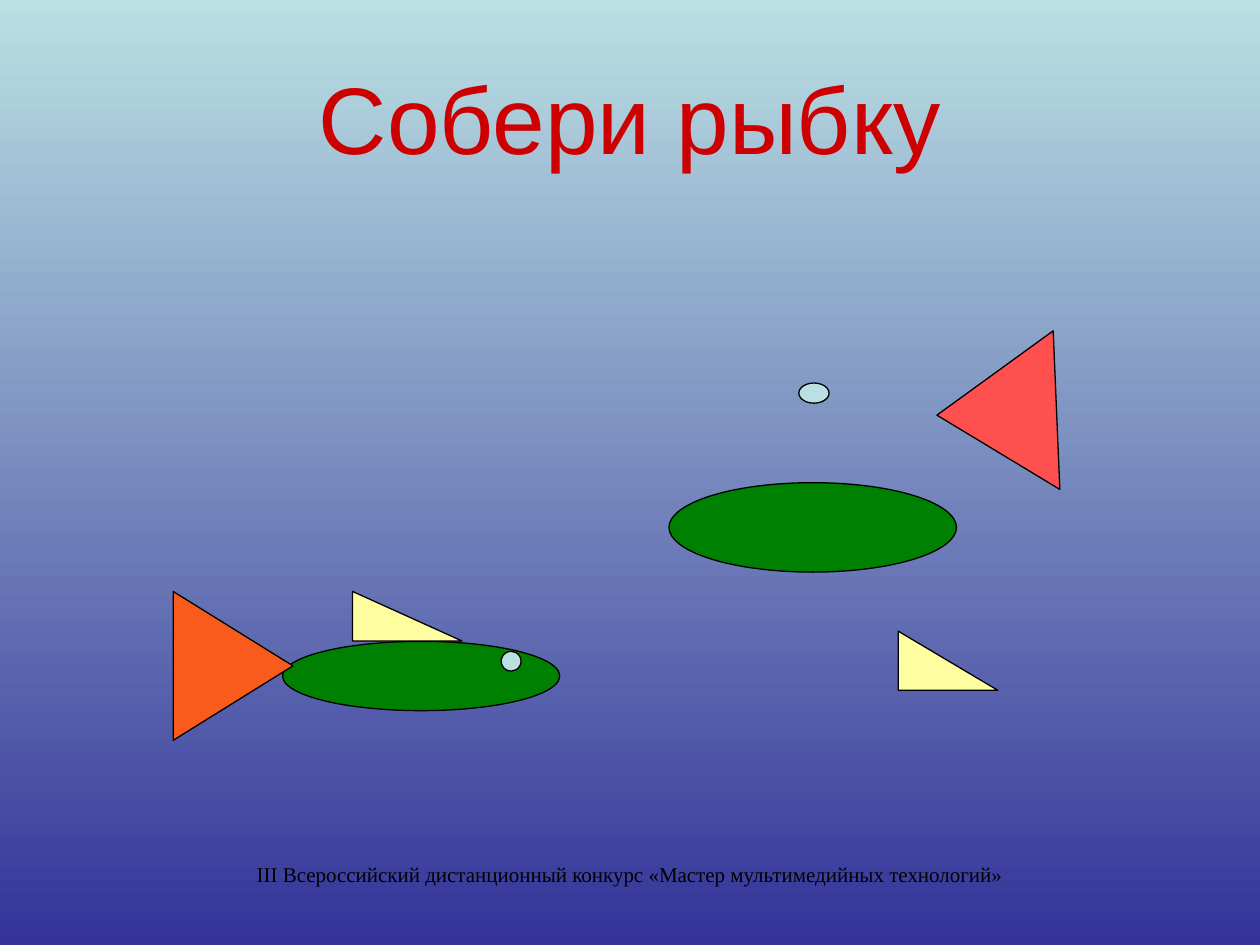
from pptx import Presentation
from pptx.dml.color import RGBColor
from pptx.enum.shapes import MSO_SHAPE
from pptx.enum.text import MSO_ANCHOR, PP_ALIGN
from pptx.util import Pt

BLACK = RGBColor(0x00, 0x00, 0x00)
RED = RGBColor(0xCC, 0x00, 0x00)
GREEN = RGBColor(0x00, 0x80, 0x00)
CORAL = RGBColor(0xFF, 0x50, 0x50)
ORANGE = RGBColor(0xF8, 0x5B, 0x1C)
YELLOW = RGBColor(0xFF, 0xFE, 0xA0)
PALE_YELLOW = RGBColor(0xFE, 0xFE, 0xA0)
PALE_BLUE = RGBColor(0xBB, 0xE0, 0xE3)
DEEP_BLUE = RGBColor(0x33, 0x33, 0x99)


def paint_background(slide):
    fill = slide.background.fill
    fill.gradient()
    fill.gradient_angle = 270
    for stop, color in zip(fill.gradient_stops, (PALE_BLUE, DEEP_BLUE)):
        stop.color.rgb = color


def add_text(slide, box, text, font_name, size, color):
    shape = slide.shapes.add_textbox(*map(Pt, box))
    frame = shape.text_frame
    frame.word_wrap = True
    frame.vertical_anchor = MSO_ANCHOR.MIDDLE
    paragraph = frame.paragraphs[0]
    paragraph.alignment = PP_ALIGN.CENTER
    run = paragraph.add_run()
    run.text = text
    run.font.name = font_name
    run.font.size = Pt(size)
    run.font.color.rgb = color


def add_fish_parts(slide, left, top, parts):
    """Draw parts, each (preset, x, y, width, height, color, rotation), from a corner."""
    for preset, x, y, width, height, color, rotation in parts:
        shape = slide.shapes.add_shape(
            preset, Pt(left + x), Pt(top + y), Pt(width), Pt(height))
        shape.shadow.inherit = False
        shape.rotation = rotation
        shape.fill.solid()
        shape.fill.fore_color.rgb = color
        shape.line.color.rgb = BLACK
        shape.line.width = Pt(0.75)


def add_loose_parts(slide, left, top):
    add_fish_parts(slide, left, top, [
        (MSO_SHAPE.OVAL, 0.3, 86.8, 164.2, 51.1, GREEN, 0),
        (MSO_SHAPE.ISOSCELES_TRIANGLE, 142.2, 12.6, 90.7, 68.4, CORAL, 267.6),
        (MSO_SHAPE.RIGHT_TRIANGLE, 131.3, 171.7, 56.9, 33.8, YELLOW, 0),
        (MSO_SHAPE.OVAL, 74.5, 29.9, 17.3, 11.5, PALE_BLUE, 0),
    ])


def add_assembled_fish(slide, left, top):
    add_fish_parts(slide, left, top, [
        (MSO_SHAPE.OVAL, 62.5, 28.5, 158.4, 39.6, GREEN, 0),
        (MSO_SHAPE.ISOSCELES_TRIANGLE, -8.3, 8.3, 85, 68.4, ORANGE, 90),
        (MSO_SHAPE.RIGHT_TRIANGLE, 102.5, 0, 62.5, 28.3, PALE_YELLOW, 0),
        (MSO_SHAPE.OVAL, 187.4, 34.2, 11.3, 11.3, PALE_BLUE, 0),
    ])


def main():
    presentation = Presentation()
    presentation.slide_width, presentation.slide_height = Pt(720), Pt(540)
    slide = presentation.slides.add_slide(presentation.slide_layouts[6])
    paint_background(slide)
    add_text(slide, (36, 21.6, 648, 90), "Собери рыбку", "Arial", 54, RED)
    add_loose_parts(slide, 382, 189)
    add_assembled_fish(slide, 99, 338)
    add_text(slide, (0, 489, 720, 21.6),
             "III Всероссийский дистанционный конкурс "
             "«Мастер мультимедийных технологий»",
             "Times New Roman", 12, BLACK)
    presentation.save("out.pptx")


if __name__ == "__main__":
    main()
